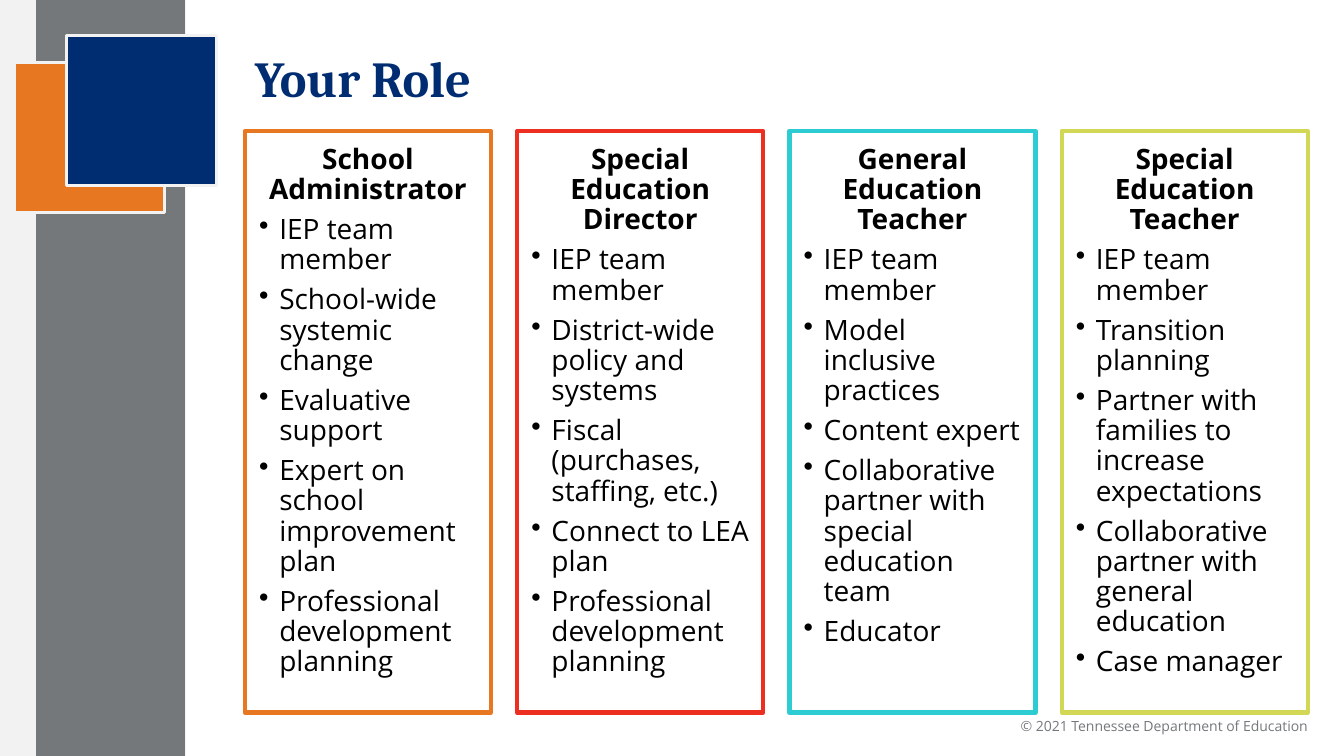
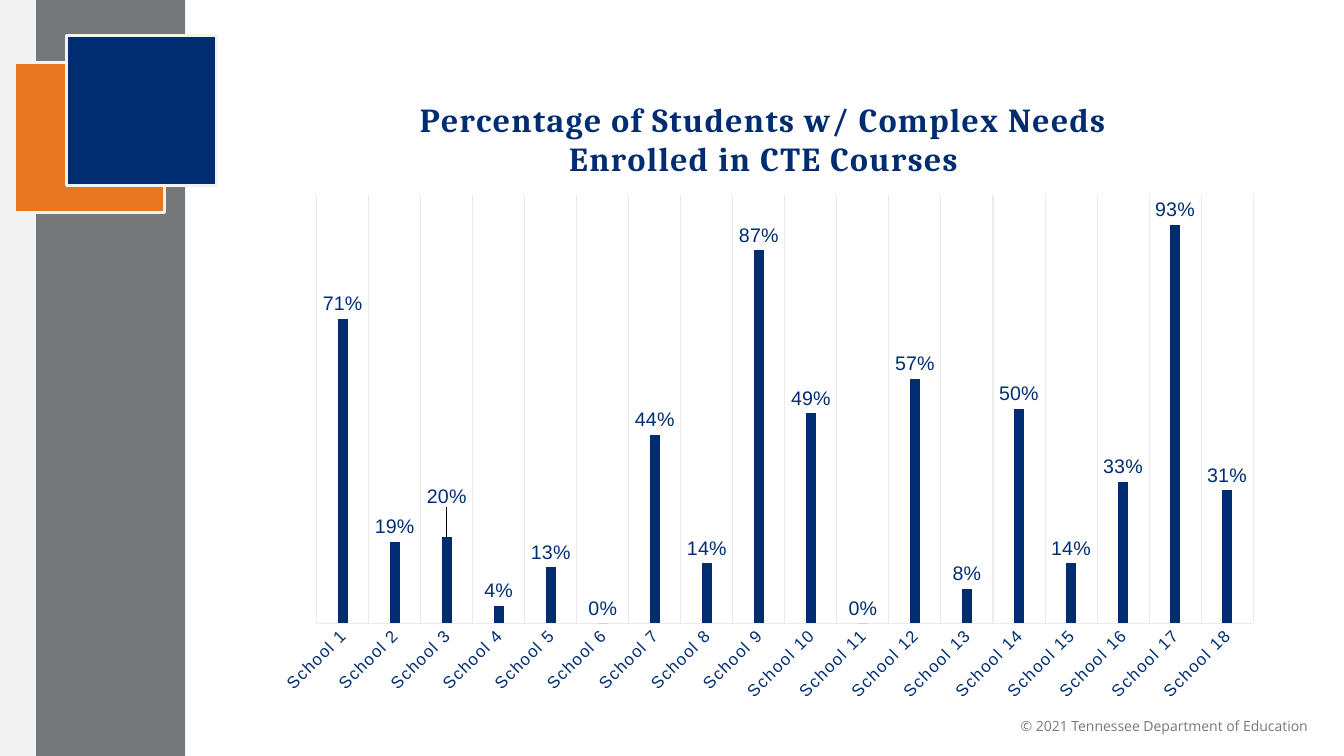
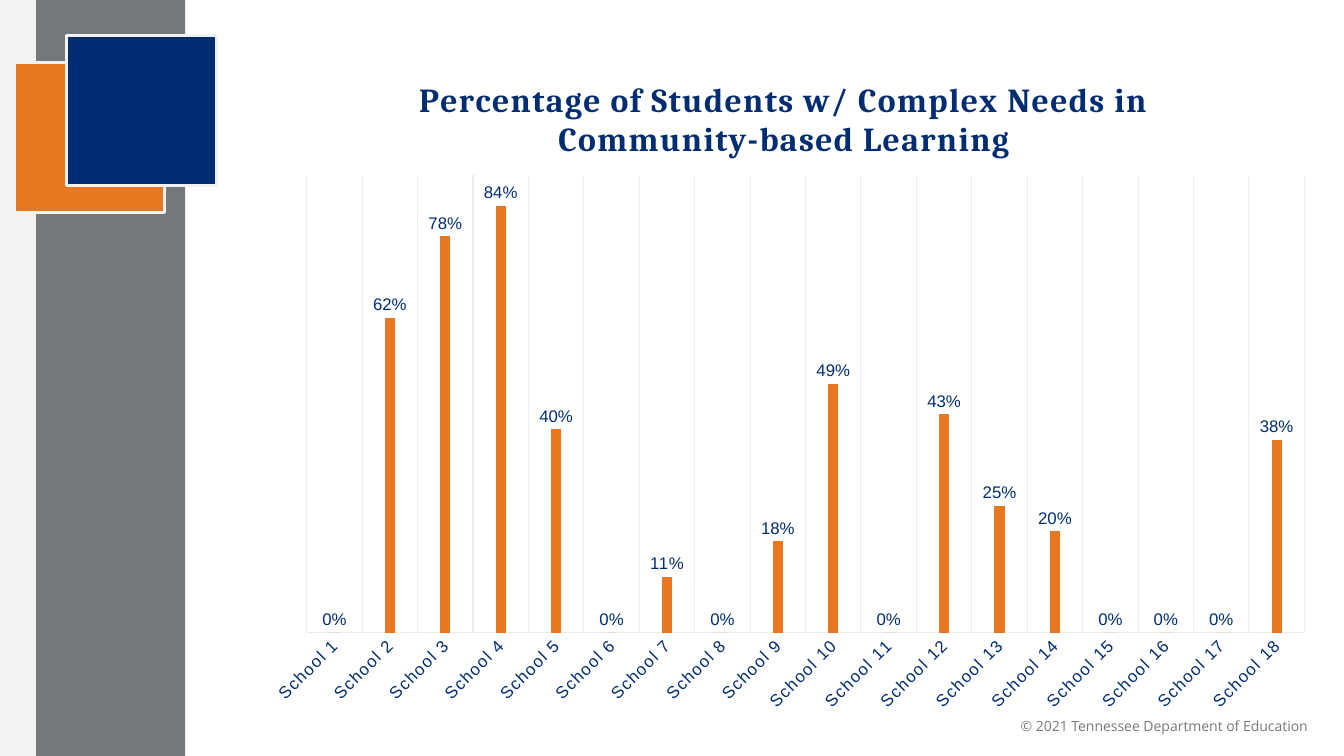
from dataclasses import dataclass

from lxml import etree
from pptx import Presentation
from pptx.chart.data import CategoryChartData
from pptx.dml.color import RGBColor
from pptx.enum.chart import XL_CHART_TYPE as ChartType
from pptx.enum.chart import XL_LABEL_POSITION as LabelPos
from pptx.enum.chart import XL_TICK_MARK as Tick
from pptx.enum.shapes import MSO_SHAPE as Shape
from pptx.enum.text import MSO_ANCHOR as Anchor
from pptx.enum.text import PP_ALIGN as Align
from pptx.oxml import parse_xml
from pptx.oxml.ns import nsdecls, qn
from pptx.util import Inches, Pt


@dataclass(frozen=True)
class Theme:
    navy: str = "002D72"
    orange: str = "E87722"
    red: str = "ED2F22"
    teal: str = "2DCCD3"
    lime: str = "D2D755"
    band: str = "74787B"
    footer: str = "75787B"
    pale: str = "F2F2F2"
    grid: str = "EAEBEB"
    black: str = "000000"
    heading: str = "Cambria"
    body: str = "Open Sans"
    chart: str = "Arial"
    title_size: float = 36
    chart_title_size: float = 24
    body_size: float = 20
    axis_size: float = 12
    footer_size: float = 10


T = Theme()
SCHOOLS = [f"School {n}" for n in range(1, 19)]

ROLES = [
    ("School Administrator", T.orange,
     ["IEP team member", "School-wide systemic change", "Evaluative support",
      "Expert on school improvement plan", "Professional development planning"]),
    ("Special Education Director", T.red,
     ["IEP team member", "District-wide policy and systems",
      "Fiscal (purchases, staffing, etc.)", "Connect to LEA plan",
      "Professional development planning"]),
    ("General Education Teacher", T.teal,
     ["IEP team member", "Model inclusive practices", "Content expert",
      "Collaborative partner with special education team", "Educator"]),
    ("Special Education Teacher", T.lime,
     ["IEP team member", "Transition planning",
      "Partner with families to increase expectations",
      "Collaborative partner with general education", "Case manager"]),
]


# Text helpers
def style_font(font, name, size, color, bold=False):
    font.name, font.size, font.bold = name, Pt(size), bold
    font.color.rgb = RGBColor.from_string(color)


def add_text(tf, text, font=T.body, size=T.body_size, color=T.black, bold=False,
             align=Align.LEFT, line=None, after=None, bullet=False):
    """Write one paragraph, reusing the empty first one."""
    p = tf.paragraphs[0] if not tf.text else tf.add_paragraph()
    p.alignment, p.line_spacing = align, line
    if after is not None:
        p.space_after = Pt(after)
    if bullet:
        pPr = p._p.get_or_add_pPr()
        pPr.set("marL", str(Inches(0.2)))
        pPr.set("indent", str(-Inches(0.2)))
        etree.SubElement(pPr, qn("a:buChar")).set("char", "•")
    r = p.add_run()
    r.text = text
    style_font(r.font, font, size, color, bold)


def set_insets(tf, x, y):
    tf.margin_left = tf.margin_right = Inches(x)
    tf.margin_top = tf.margin_bottom = Inches(y)


def add_textbox(s, box, insets=(0.1, 0.05), anchor=Anchor.TOP):
    tf = s.shapes.add_textbox(*map(Inches, box)).text_frame
    tf.word_wrap, tf.vertical_anchor = True, anchor
    set_insets(tf, *insets)
    return tf


def add_rect(s, box, fill=None, line=None, weight=1):
    sp = s.shapes.add_shape(Shape.RECTANGLE, *map(Inches, box))
    sp.shadow.inherit = False
    if fill:
        sp.fill.solid()
        sp.fill.fore_color.rgb = RGBColor.from_string(fill)
    else:
        sp.fill.background()
    if line:
        sp.line.color.rgb = RGBColor.from_string(line)
        sp.line.width = Pt(weight)
    else:
        sp.line.fill.background()
    return sp


# Shared slide frame: footer, side bands, overlapping squares
def new_slide(prs):
    s = prs.slides.add_slide(prs.slide_layouts[6])
    tf = add_textbox(s, (7.09, 7.03, 6.08, 0.37), (0.2, 0.1))
    add_text(tf, "© 2021 Tennessee Department of Education",
             size=T.footer_size, color=T.footer, align=Align.RIGHT)
    add_rect(s, (0, 0, 1.26, 7.5), T.pale)
    add_rect(s, (0.35, -0.21, 1.49, 7.89), T.band, T.pale)
    for x, y, color in ((0.14, 0.62, T.orange), (0.66, 0.35, T.navy)):
        add_rect(s, (x, y, 1.49, 1.49), color, T.pale, 2.25)
    return s


# Roles slide
def add_role(s, box, role, color, duties):
    sp = add_rect(s, box, line=color, weight=3)
    tf = sp.text_frame
    tf.word_wrap, tf.vertical_anchor = True, Anchor.TOP
    set_insets(tf, 0.14, 0.14)
    spacing = dict(line=0.9, after=7)
    add_text(tf, role, bold=True, align=Align.CENTER, **spacing)
    for duty in duties:
        add_text(tf, duty, bullet=True, **spacing)


def roles_slide(prs, title, roles, box=(2.43, 1.3, 10.54, 5.77), gap=0.26):
    s = new_slide(prs)
    tf = add_textbox(s, (2.43, 0.11, 10.27, 1.32), anchor=Anchor.MIDDLE)
    add_text(tf, title, T.heading, T.title_size, T.navy, bold=True)
    x, y, w, h = box
    col_w = (w - gap * (len(roles) - 1)) / len(roles)
    for i, role in enumerate(roles):
        add_role(s, (x + i * (col_w + gap), y, col_w, h), *role)


# Chart slides
def manual_layout(x, y, w=None, h=None, inner=False):
    """Build a c:layout from fractions of the chart."""
    parts = ['<c:layoutTarget val="inner"/>'] if inner else []
    places = {"x": x, "y": y}
    if inner:
        parts += ['<c:xMode val="edge"/>', '<c:yMode val="edge"/>']
        places.update(w=w, h=h)
    parts += [f'<c:{k} val="{v:.3f}"/>' for k, v in places.items()]
    return parse_xml(f'<c:layout {nsdecls("c")}><c:manualLayout>{"".join(parts)}'
                     '</c:manualLayout></c:layout>')


def put_layout(parent, layout, index):
    for old in parent.findall(qn("c:layout")):
        parent.remove(old)
    parent.insert(index, layout)


def style_title(chart, title):
    tf = chart.chart_title.text_frame
    add_text(tf, title, T.heading, T.chart_title_size, T.navy, bold=True,
             align=Align.CENTER)
    tf.paragraphs[0].runs[0].font._element.set("spc", "100")
    layout = manual_layout(0.15, 0.04)
    for tag in ("c:yMode", "c:xMode"):
        mode = etree.Element(qn(tag))
        mode.set("val", "edge")
        layout[0].insert(0, mode)
    put_layout(chart.chart_title._element, layout, 1)
    chart.chart_title.include_in_layout = False


def style_axes(chart, top):
    cat, val = chart.category_axis, chart.value_axis
    cat.major_tick_mark = cat.minor_tick_mark = Tick.NONE
    cat.has_major_gridlines = True
    for line in (cat.format.line, cat.major_gridlines.format.line):
        line.color.rgb = RGBColor.from_string(T.grid)
        line.width = Pt(0.75)
    style_font(cat.tick_labels.font, T.chart, T.axis_size, T.navy)
    cat.tick_labels.font._element.set("spc", "100")
    cat._element.find(qn("c:txPr")).find(qn("a:bodyPr")).set("rot", "-2700000")
    val.has_major_gridlines = False
    val.minimum_scale, val.maximum_scale = 0, top
    val.visible = False


def raise_label(point, offset, size):
    label = point.data_label
    style_font(label.font, T.chart, size, T.navy)
    label.position = LabelPos.OUTSIDE_END
    dLbl = label._dLbl
    put_layout(dLbl, manual_layout(0, -offset), 1)
    dLbl.insert(2, parse_xml(f'<c:numFmt {nsdecls("c")} formatCode="0%" '
                             'sourceLinked="0"/>'))


def chart_slide(prs, title, series, values, box, plot, top, color, label_size,
                raised=None):
    s = new_slide(prs)
    data = CategoryChartData(number_format="0%")
    data.categories = SCHOOLS
    data.add_series(series, values)
    chart = s.shapes.add_chart(ChartType.COLUMN_CLUSTERED, *map(Inches, box),
                               data).chart
    style_font(chart.font, T.body, 10, T.navy)
    chart.has_legend = False
    style_title(chart, title)
    style_axes(chart, top)

    # Plot area, given in slide inches
    x, y, w, h = box
    px, py, pw, ph = plot
    put_layout(chart._chartSpace.chart.plotArea,
               manual_layout((px - x) / w, (py - y) / h, pw / w, ph / h, inner=True), 0)

    # Columns and value labels
    bars = chart.plots[0]
    bars.gap_width, bars.overlap, bars.vary_by_categories = 444, -90, False
    ser = bars.series[0]
    ser.format.fill.solid()
    ser.format.fill.fore_color.rgb = RGBColor.from_string(color)
    labels = ser.data_labels
    labels.show_value, labels.position = True, LabelPos.OUTSIDE_END
    labels.number_format, labels.number_format_is_linked = "0%", False
    style_font(labels.font, T.chart, label_size, T.navy)
    if raised is not None:
        raise_label(ser.points[raised], 0.04, label_size)


def main():
    prs = Presentation()
    prs.slide_width, prs.slide_height = Inches(13.33), Inches(7.5)
    roles_slide(prs, "Your Role", ROLES)
    chart_slide(
        prs, "Percentage of Students w/ Complex Needs Enrolled in CTE Courses",
        "Series 1",
        [0.71, 0.19, 0.2, 0.04, 0.13, 0, 0.44, 0.14, 0.87,
         0.49, 0, 0.57, 0.08, 0.5, 0.14, 0.33, 0.93, 0.31],
        box=(2.6, 0.66, 10.03, 6.43), plot=(3.14, 1.93, 9.29, 4.25),
        top=1, color=T.navy, label_size=14, raised=2)
    community = "Percentage of Students w/ Complex Needs in Community-based Learning"
    chart_slide(
        prs, community, community,
        [0, 0.62, 0.78, 0.84, 0.4, 0, 0.11, 0, 0.18,
         0.49, 0, 0.43, 0.25, 0.2, 0, 0, 0, 0.38],
        box=(2.5, 0.44, 10.64, 6.76), plot=(3.04, 1.74, 9.89, 4.54),
        top=0.9, color=T.orange, label_size=12)
    prs.save("out.pptx")


if __name__ == "__main__":
    main()
